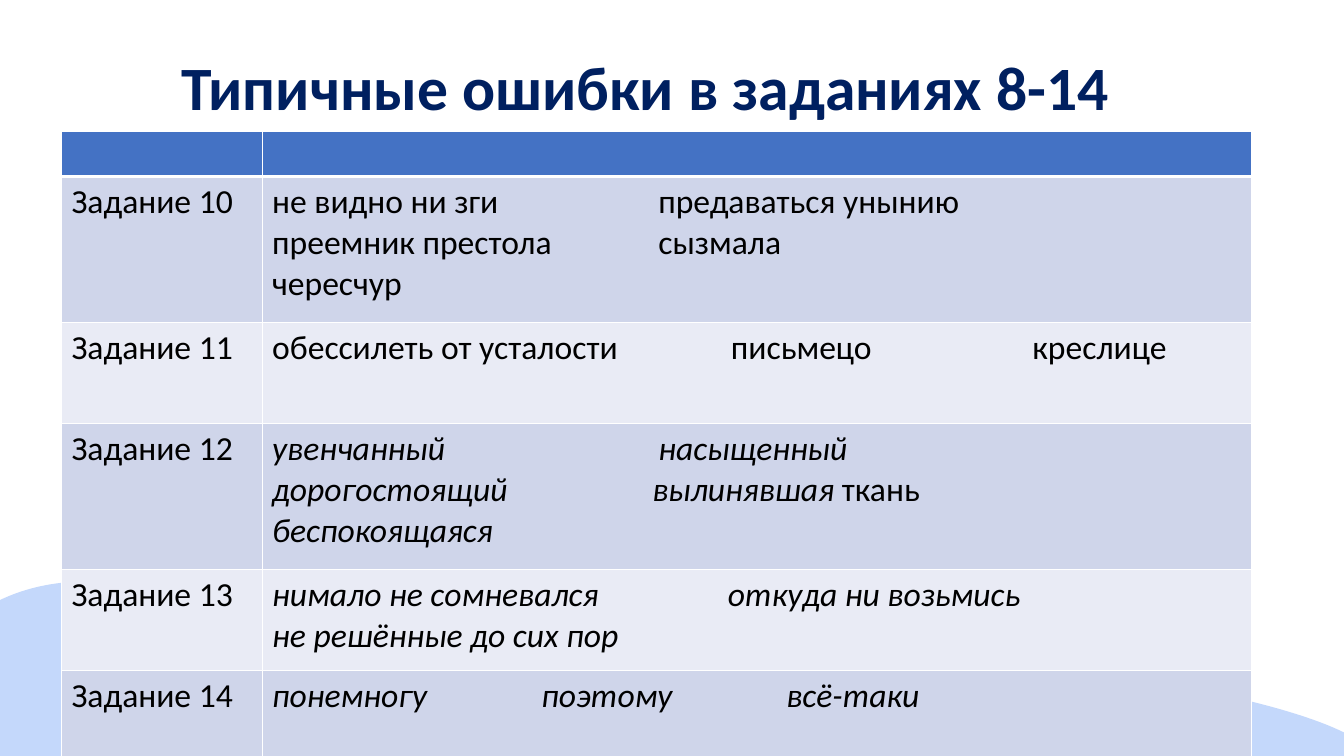
from math import cos, radians, sin

from lxml.etree import SubElement
from pptx import Presentation
from pptx.dml.color import RGBColor
from pptx.enum.text import MSO_ANCHOR, PP_ALIGN
from pptx.oxml.ns import qn
from pptx.util import Inches, Pt

COLORS = {
    "wave": "C4D8FB", "title": "002060", "header": "4472C4",
    "odd": "CFD5EA", "even": "E9EBF5", "text": "000000", "rule": "FFFFFF",
}
FONT = "Calibri"

WAVE_ANGLE = 48.6
WAVE_START = (0.84, 5.77)
WAVE_CURVES = [
    ((2.12, 5.76), (5.02, 6.94), (6.73, 7.16)),
    ((8.43, 7.38), (10.25, 6.68), (11.32, 6.77)),
    ((12.39, 6.86), (14.51, 7.47), (13.13, 7.71)),
    ((11.75, 7.94), (5.13, 8.09), (3.06, 8.15)),
    ((1, 8.22), (1.41, 8.24), (0.74, 8.09)),
    ((0.07, 7.93), (-0.97, 7.61), (-0.96, 7.22)),
    ((-0.94, 6.83), (-0.45, 5.78), WAVE_START),
]

COL_WIDTHS = [1.99, 9.81]
HEADER_HEIGHT = 0.45
TASKS = [
    ("Задание 10", 1.45, False, [
        (["не видно ни зги", "предаваться унынию"], [3.83]),
        (["преемник престола", "сызмала"], [3.83]),
        (["чересчур"], []),
    ]),
    ("Задание 11", 1, False, [
        (["обессилеть от усталости", "письмецо", "креслице"], [4.55, 7.54]),
    ]),
    ("Задание 12", 1.45, True, [
        (["увенчанный", "насыщенный"], [3.83]),
        (["дорогостоящий", "вылинявшая| ткань|\nбеспокоящаяся"], [3.77]),
    ]),
    ("Задание 13", 1, True, [
        (["нимало не сомневался", "откуда ни возьмись"], [4.52]),
        (["не решённые до сих пор"], []),
    ]),
    ("Задание 14", 1, True, [
        (["понемногу", "поэтому", "всё-таки"], [2.67, 5.1]),
    ]),
]


def rgb(name):
    """Return the named colour."""
    return RGBColor.from_string(COLORS[name])


def set_font(p, size, color, bold=False, italic=False):
    """Set the font of a whole paragraph."""
    f = p.font
    f.name, f.size, f.bold, f.italic = FONT, Pt(size), bold, italic
    f.color.rgb = rgb(color)


def add_wave(slide, left, top, width, height):
    """Draw the pale wave as curves in a rotated box."""
    c, s = cos(radians(WAVE_ANGLE)), sin(radians(WAVE_ANGLE))

    def local(point):
        """Turn a slide point back into the unrotated box."""
        dx = point[0] - left - width / 2
        dy = point[1] - top - height / 2
        return (Inches(width / 2 + dx * c + dy * s),
                Inches(height / 2 - dx * s + dy * c))

    fb = slide.shapes.build_freeform(*local(WAVE_START))
    fb.add_line_segments([local(curve[-1]) for curve in WAVE_CURVES])
    sp = fb.convert_to_shape()
    sp.left, sp.top, sp.width, sp.height = map(
        Inches, (left, top, width, height))
    sp.rotation = WAVE_ANGLE
    outline = next(sp._element.iter(qn("a:path")))
    outline.set("w", str(sp.width))
    outline.set("h", str(sp.height))
    for step in list(outline):
        outline.remove(step)
    commands = [("a:moveTo", [WAVE_START])]
    commands += [("a:cubicBezTo", curve) for curve in WAVE_CURVES]
    for tag, points in commands:
        step = SubElement(outline, qn(tag))
        for x, y in map(local, points):
            SubElement(step, qn("a:pt"), x=str(x), y=str(y))
    SubElement(outline, qn("a:close"))
    sp.shadow.inherit = False
    sp.fill.solid()
    sp.fill.fore_color.rgb = rgb("wave")
    sp.line.fill.background()


def add_title(slide, left, top, width, height):
    """Add the slide heading."""
    box = slide.shapes.add_textbox(*map(Inches, (left, top, width, height)))
    tf = box.text_frame
    tf.word_wrap = True
    tf.vertical_anchor = MSO_ANCHOR.MIDDLE
    p = tf.paragraphs[0]
    p.text = "Типичные ошибки в заданиях 8-14"
    p.alignment = PP_ALIGN.LEFT
    p.line_spacing = 0.9
    set_font(p, 44, "title", bold=True)


def add_tabs(p, stops):
    """Give a paragraph left tab stops."""
    tabs = SubElement(p._p.get_or_add_pPr(), qn("a:tabLst"))
    for stop in stops:
        SubElement(tabs, qn("a:tab"), pos=str(Inches(stop)), algn="l")


def set_borders(cell, widths):
    """Draw white cell borders of the given point widths by side."""
    tc_pr = cell._tc.get_or_add_tcPr()
    for i, (side, width) in enumerate(widths.items()):
        ln = SubElement(tc_pr, qn(f"a:ln{side}"), w=str(Pt(width)))
        fill = SubElement(ln, qn("a:solidFill"))
        SubElement(fill, qn("a:srgbClr"), val=COLORS["rule"])
        tc_pr.insert(i, ln)


def fill_cell(cell, lines, italic=False):
    """Write lines of tabbed words; a bar switches the slant."""
    tf = cell.text_frame
    for i, (words, stops) in enumerate(lines):
        p = tf.add_paragraph() if i else tf.paragraphs[0]
        if stops:
            add_tabs(p, stops)
        set_font(p, 24, "text", italic=italic)
        for k, part in enumerate("\t".join(words).split("|")):
            if part.startswith("\n"):
                p.add_line_break()
            r = p.add_run()
            r.text = part.lstrip("\n")
            if k % 2:
                r.font.italic = not italic


def add_tasks(slide, left, top):
    """Add the table of tasks and their typical errors."""
    heights = [HEADER_HEIGHT] + [task[1] for task in TASKS]
    frame = slide.shapes.add_table(
        len(heights), len(COL_WIDTHS), Inches(left), Inches(top),
        Inches(sum(COL_WIDTHS)), Inches(sum(heights)))
    table = frame.table
    for col, width in zip(table.columns, COL_WIDTHS):
        col.width = Inches(width)
    for i, (row, height) in enumerate(zip(table.rows, heights)):
        row.height = Inches(height)
        band = "header" if i == 0 else "odd" if i % 2 else "even"
        for cell in row.cells:
            set_borders(cell, {"L": 1, "R": 1, "T": 3 if i == 1 else 1,
                               "B": 1 if i else 3})
            cell.fill.solid()
            cell.fill.fore_color.rgb = rgb(band)
    for i, (label, _, italic, lines) in enumerate(TASKS, 1):
        fill_cell(table.cell(i, 0), [([label], [])])
        fill_cell(table.cell(i, 1), lines, italic)


def main():
    """Build and save the slide."""
    prs = Presentation()
    prs.slide_width, prs.slide_height = Inches(13.33), Inches(7.5)
    slide = prs.slides.add_slide(prs.slide_layouts[6])
    add_wave(slide, 1.06, 1.83, 10.24, 10.81)
    add_title(slide, 1.7, 0.4, 10.71, 1)
    add_tasks(slide, 0.61, 1.3)
    prs.save("out.pptx")


if __name__ == "__main__":
    main()
